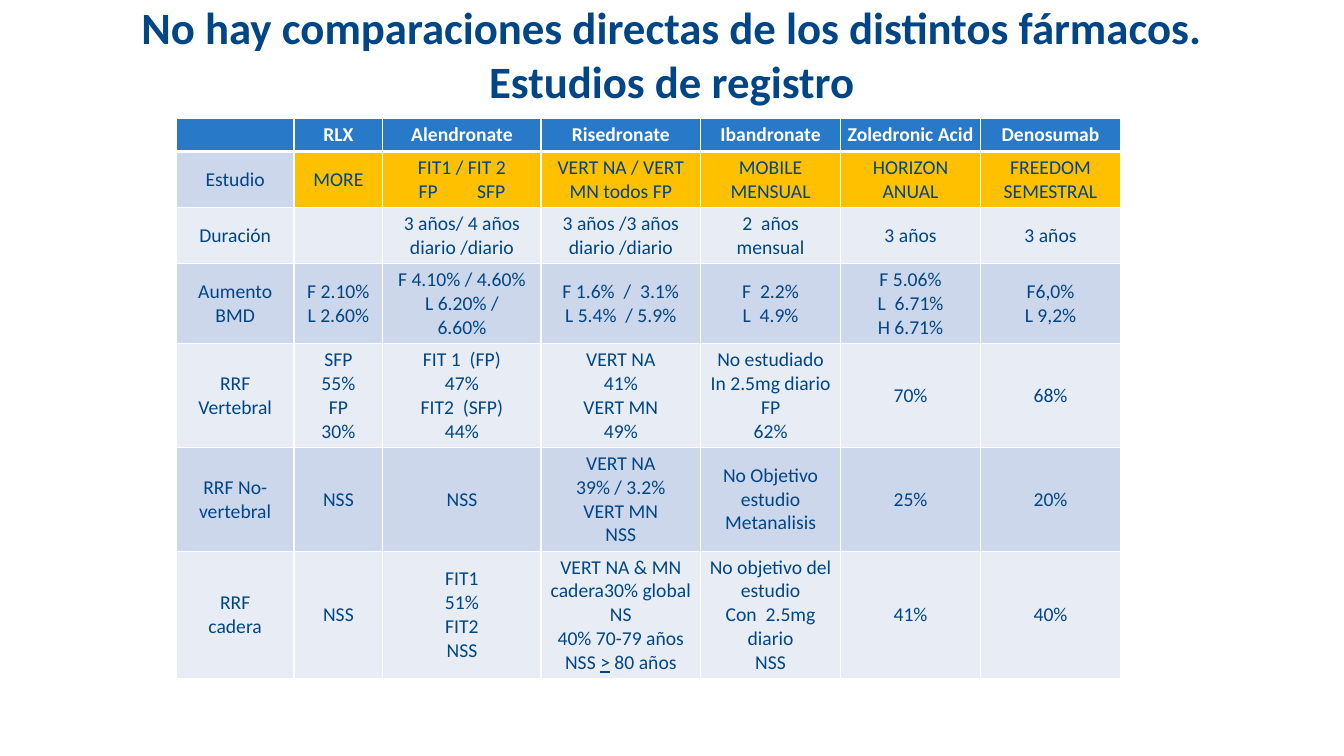
from dataclasses import dataclass

from lxml import etree
from pptx import Presentation
from pptx import util as u
from pptx.dml import color
from pptx.enum import text
from pptx.oxml import ns


@dataclass(frozen=True)
class Theme:
    font: str = "Calibri"
    title_size: int = 32
    cell_size: int = 14
    ink: str = "004586"
    white: str = "FFFFFF"
    header: str = "287AC8"
    study: str = "FFC000"
    bands: tuple = ("CDD7EB", "E8ECF5")
    rule: int = 1
    header_rule: int = 3
    inset: int = 3


@dataclass(frozen=True)
class Span:
    text: str
    underline: bool = False
    spacing: int = 0


HEADS = ["", "RLX", "Alendronate", "Risedronate", "Ibandronate",
         "Zoledronic Acid", "Denosumab"]

ROWS = [
    ["Estudio", "MORE",
     ["FIT1 / FIT 2", [Span("FP"), Span(" ", spacing=25), Span("SFP")]],
     "VERT NA / VERT MN todos FP", ["MOBILE", "MENSUAL"],
     ["HORIZON", "ANUAL"], ["FREEDOM", "SEMESTRAL"]],
    ["Duración", "", ["3 años/ 4 años", "diario /diario"],
     ["3 años /3 años", "diario /diario"], ["2  años", "mensual"],
     "3 años", "3 años"],
    ["Aumento BMD", ["F 2.10%", "L 2.60%"],
     ["F 4.10% / 4.60%", "L 6.20% /", "6.60%"],
     ["F 1.6%  /  3.1%", "L 5.4%  / 5.9%"], ["F  2.2%", "L  4.9%"],
     ["F 5.06%", "L  6.71%", "H 6.71%"], ["F6,0%", "L 9,2%"]],
    [["RRF", "Vertebral"], ["SFP", "55%", "FP", "30%"],
     ["FIT 1  (FP)", "47%", "FIT2  (SFP)", "44%"],
     ["VERT NA", "41%", "VERT MN", "49%"],
     ["No estudiado", "In 2.5mg diario", "FP", "62%"], "70%", "68%"],
    ["RRF No-vertebral", "NSS", "NSS",
     ["VERT NA", "39% / 3.2%", "VERT MN", "NSS"],
     ["No Objetivo estudio", "Metanalisis"], "25%", "20%"],
    [["RRF", "cadera"], "NSS", ["FIT1", "51%", "FIT2", "NSS"],
     ["VERT NA & MN", "cadera30% global NS", "40% 70-79 años",
      [Span("NSS "), Span(">", underline=True), Span(" 80 años")]],
     ["No objetivo del estudio", "Con  2.5mg diario", "NSS"], "41%", "40%"],
]

COL_WIDTHS = [84, 63.5, 113, 114, 100, 100, 100]
ROW_HEIGHTS = [24, 34, 34, 55, 71, 62, 87]


class Deck:
    def __init__(self, theme):
        self.theme = theme
        self.prs = Presentation()
        self.prs.slide_width, self.prs.slide_height = u.Pt(960), u.Pt(540)
        self.s = self.prs.slides.add_slide(self.prs.slide_layouts[5])

    def run(self, p, span, size, ink, bold):
        r = p.add_run()
        r.text = span.text
        f = r.font
        f.name, f.size, f.bold = self.theme.font, u.Pt(size), bold
        f.color.rgb = color.RGBColor.from_string(ink)
        if span.underline:
            f.underline = True
        if span.spacing:
            r._r.get_or_add_rPr().set("spc", str(span.spacing * 100))

    def title(self, lines, left, top, width, height):
        sp = self.s.shapes.title
        sp.left, sp.top, sp.width, sp.height = map(u.Pt, (left, top, width, height))
        tf = sp.text_frame
        tf.word_wrap, tf.auto_size = True, text.MSO_AUTO_SIZE.NONE
        tf.vertical_anchor = text.MSO_ANCHOR.MIDDLE
        p = tf.paragraphs[0]
        p.alignment = text.PP_ALIGN.CENTER
        for i, line in enumerate(lines):
            if i:
                p.add_line_break()
            self.run(p, Span(line), self.theme.title_size, self.theme.ink, True)

    def borders(self, cell, top, bottom):
        tcPr = cell._tc.get_or_add_tcPr()
        rule = self.theme.rule
        for side, width in (("L", rule), ("R", rule), ("T", top), ("B", bottom)):
            ln = etree.SubElement(tcPr, ns.qn(f"a:ln{side}"), w=str(u.Pt(width)))
            fill = etree.SubElement(ln, ns.qn("a:solidFill"))
            etree.SubElement(fill, ns.qn("a:srgbClr"), val=self.theme.white)

    def cell(self, cell, content, row, col):
        t = self.theme
        head = row == 0
        self.borders(cell, t.header_rule if row == 1 else t.rule,
                     t.header_rule if head else t.rule)
        if head:
            back = t.header
        elif row == 1 and col:
            back = t.study
        else:
            back = t.bands[(row - 1) % 2]
        cell.fill.solid()
        cell.fill.fore_color.rgb = color.RGBColor.from_string(back)
        cell.vertical_anchor = text.MSO_ANCHOR.MIDDLE
        cell.margin_left = cell.margin_right = u.Pt(t.inset)
        cell.margin_top = cell.margin_bottom = u.Pt(t.inset)
        tf = cell.text_frame
        for i, line in enumerate([content] if isinstance(content, str) else content):
            p = tf.add_paragraph() if i else tf.paragraphs[0]
            p.alignment = text.PP_ALIGN.CENTER
            if not line:
                p._p.get_or_add_endParaRPr().set("sz", str(t.cell_size * 100))
                continue
            for span in [Span(line)] if isinstance(line, str) else line:
                self.run(p, span, t.cell_size, t.white if head else t.ink, head)

    def table(self, rows, widths, heights, left, top):
        frame = self.s.shapes.add_table(
            len(rows), len(widths), u.Pt(left), u.Pt(top),
            u.Pt(sum(widths)), u.Pt(sum(heights)))
        tbl = frame.table
        for column, width in zip(tbl.columns, widths):
            column.width = u.Pt(width)
        for row, height in zip(tbl.rows, heights):
            row.height = u.Pt(height)
        for i, row in enumerate(rows):
            for j, content in enumerate(row):
                self.cell(tbl.cell(i, j), content, i, j)


def main():
    deck = Deck(Theme())
    deck.title(["No hay comparaciones directas de los distintos fármacos.",
                "Estudios de registro"], 48, 14.4, 864, 47.5)
    deck.table([HEADS] + ROWS, COL_WIDTHS, ROW_HEIGHTS, 126, 84.3)
    deck.prs.save("out.pptx")


if __name__ == "__main__":
    main()
